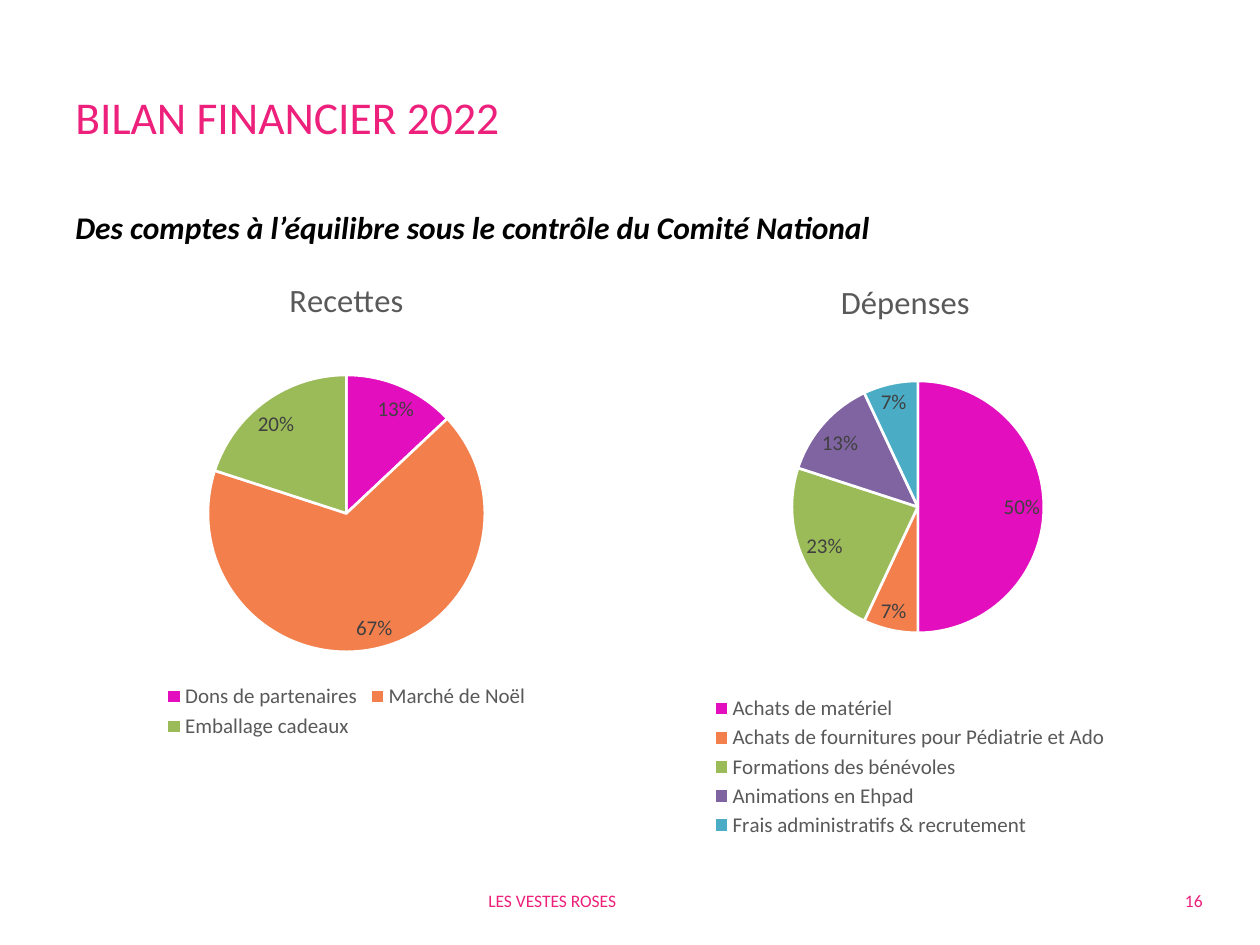
import pptx
import pptx.chart.data
import pptx.dml.color
import pptx.enum.chart
import pptx.enum.text
import pptx.oxml
import pptx.oxml.ns
import pptx.util

SCALE = 914400 // 126
FONT = "Calibri"
COLORS = {
    "pink": "ED207B", "black": "000000", "white": "FFFFFF",
    "gray": "595959", "label": "404040",
}
SLICES = ["E30EBD", "F37F4D", "9BBB59", "8064A2", "4BACC6"]
RECETTES = {"Dons de partenaires": 0.13, "Marché de Noël": 0.67,
            "Emballage cadeaux": 0.2}
DEPENSES = {"Achats de matériel": 0.5,
            "Achats de fournitures pour Pédiatrie et Ado": 0.07,
            "Formations des bénévoles": 0.23,
            "Animations en Ehpad": 0.13,
            "Frais administratifs & recrutement": 0.07}


def px(n):
    """Turn px into EMU."""
    return pptx.util.Emu(n * SCALE)


def rgb(name):
    """Look up a named colour."""
    return pptx.dml.color.RGBColor.from_string(COLORS[name])


def style(font, size, color, bold=False, italic=False):
    """Set the face, size and colour of a font."""
    font.name = FONT
    font.size = pptx.util.Pt(size)
    font.color.rgb = rgb(color)
    font.bold = bold
    font.italic = italic


def add_text(slide, box, text, size, color="pink", anchor="MIDDLE",
             align="LEFT", strong=False):
    """Add a one-line text box."""
    sp = slide.shapes.add_textbox(*map(px, box))
    tf = sp.text_frame
    tf.word_wrap = True
    tf.vertical_anchor = getattr(pptx.enum.text.MSO_ANCHOR, anchor)
    p = tf.paragraphs[0]
    p.alignment = getattr(pptx.enum.text.PP_ALIGN, align)
    r = p.add_run()
    r.text = text
    style(r.font, size, color, strong, strong)


def set_layout(parent, index, area, box, inner=False):
    """Place a chart part at a px box, as fractions of the chart area."""
    for old in parent.findall(pptx.oxml.ns.qn("c:layout")):
        parent.remove(old)
    x, y, w, h = area
    left, top, width, height = box
    values = {"x": (left - x) / w, "y": (top - y) / h,
              "w": width / w, "h": height / h}
    target = '<c:layoutTarget val="inner"/>' if inner else ""
    modes = "".join(f'<c:{k}Mode val="edge"/>' for k in "xy")
    sizes = "".join(f'<c:{k} val="{v:.4f}"/>' for k, v in values.items())
    parent.insert(index, pptx.oxml.parse_xml(
        f'<c:layout {pptx.oxml.ns.nsdecls("c")}><c:manualLayout>'
        f"{target}{modes}{sizes}</c:manualLayout></c:layout>"))


def add_pie(slide, area, title, shares, pie_box, legend_box=None):
    """Add a pie chart with percent labels and a bottom legend."""
    data = pptx.chart.data.CategoryChartData(number_format="0%")
    data.categories = list(shares)
    data.add_series(title, list(shares.values()))
    chart = slide.shapes.add_chart(
        pptx.enum.chart.XL_CHART_TYPE.PIE, *map(px, area), data).chart
    style(chart.font, 10, "black")

    chart.has_title = True
    r = chart.chart_title.text_frame.paragraphs[0].add_run()
    r.text = title
    style(r.font, 18.6, "gray")
    chart.chart_title.include_in_layout = False

    chart.has_legend = True
    legend = chart.legend
    legend.position = pptx.enum.chart.XL_LEGEND_POSITION.BOTTOM
    legend.include_in_layout = False
    style(legend.font, 12, "gray")

    plot = chart.plots[0]
    plot.vary_by_categories = True
    series = plot.series[0]
    for i, color in enumerate(SLICES[:len(shares)]):
        fmt = series.points[i].format
        fmt.fill.solid()
        fmt.fill.fore_color.rgb = pptx.dml.color.RGBColor.from_string(color)
        fmt.line.color.rgb = rgb("white")
        fmt.line.width = pptx.util.Pt(1.5)

    labels = series.data_labels
    labels.show_value = True
    labels.number_format = "0%"
    labels.number_format_is_linked = False
    labels.position = pptx.enum.chart.XL_LABEL_POSITION.BEST_FIT
    style(labels.font, 12, "label")

    set_layout(chart._chartSpace.chart.plotArea, 0, area, pie_box, True)
    if legend_box:
        set_layout(legend._element, 1, area, legend_box)


def main():
    """Build the slide and save it."""
    prs = pptx.Presentation()
    prs.slide_width, prs.slide_height = px(1260), px(945)
    slide = prs.slides.add_slide(prs.slide_layouts[6])
    add_text(slide, (63, 38, 1134, 157), "BILAN FINANCIER 2022", 26)
    add_text(slide, (63, 202, 1150, 624),
             "Des comptes à l’équilibre sous le contrôle du Comité National",
             18, "black", anchor="TOP", strong=True)
    add_text(slide, (1166, 876, 49, 50), "16", 10, align="RIGHT")
    add_text(slide, (476, 876, 381, 50), "LES VESTES ROSES", 10)
    add_pie(slide, (63, 255, 567, 489), "Recettes", RECETTES,
            (208, 375, 277, 277))
    add_pie(slide, (622, 255, 567, 591), "Dépenses", DEPENSES,
            (792, 381, 252, 252), (705, 692, 410, 150))
    prs.save("out.pptx")


if __name__ == "__main__":
    main()
